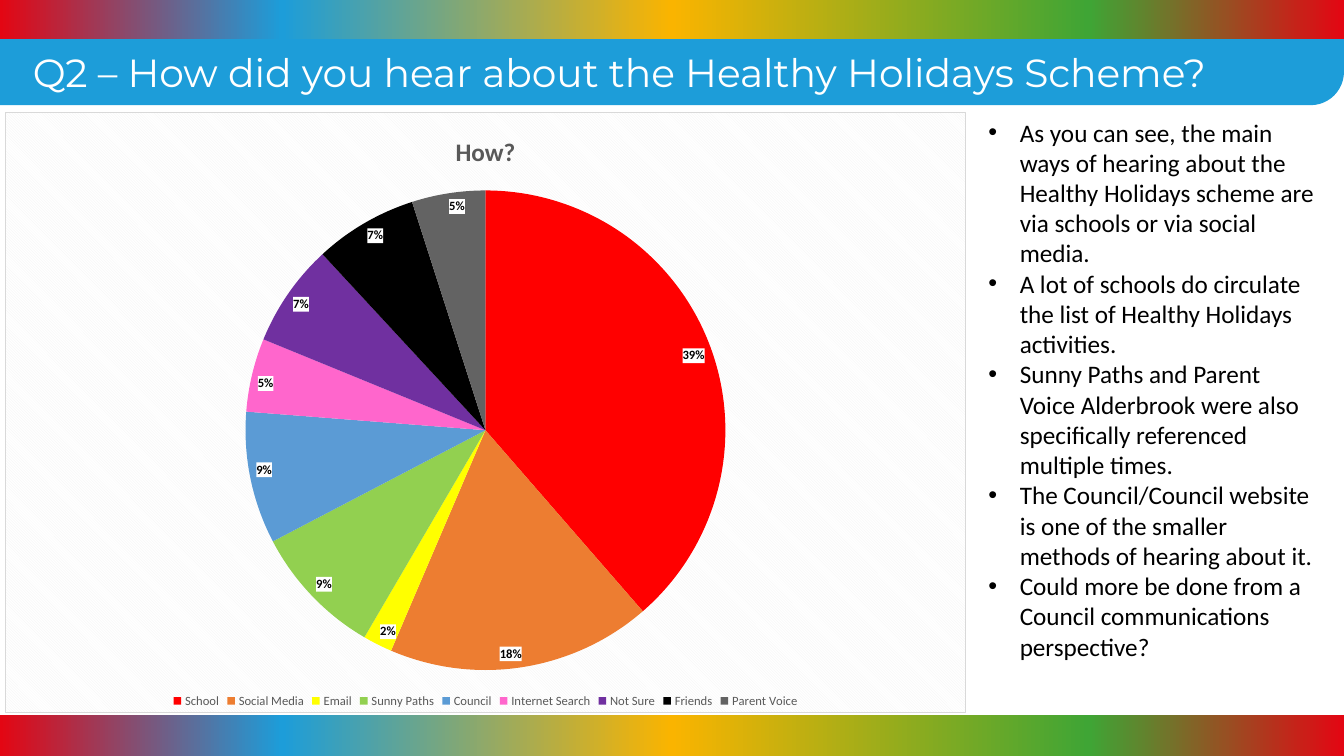
import pptx
import pptx.chart.data
import pptx.enum.chart
import pptx.enum.shapes
import pptx.enum.text
import pptx.oxml
import pptx.oxml.ns
from dataclasses import dataclass
from lxml import etree
from pptx.util import Cm, Pt

qn = pptx.oxml.ns.qn


@dataclass(frozen=True)
class Theme:
    banner: str = "1D9DD9"
    white: str = "FFFFFF"
    black: str = "000000"
    muted: str = "595959"
    frame: str = "D9D9D9"
    hatch: str = "F2F2F2"
    rainbow: tuple = ((0, "E30613"), (21, "1D9DD9"), (50, "FAB400"),
                      (81, "3FA535"), (100, "E30613"))
    heading_font: str = "Montserrat"
    body_font: str = "Calibri"
    heading_size: int = 28
    body_size: int = 18
    chart_size: int = 10
    label_size: int = 9


THEME = Theme()
SLIDE_WIDTH, SLIDE_HEIGHT = Cm(33.87), Cm(19.05)
STRIP_HEIGHT = Cm(1.02)

HEADING = "Q2 – How did you hear about the Healthy Holidays Scheme?"
SOURCES = (
    ("School", 39, "FF0000"),
    ("Social Media", 18, "ED7D31"),
    ("Email", 2, "FFFF00"),
    ("Sunny Paths", 9, "92D050"),
    ("Council", 9, "5B9BD5"),
    ("Internet Search", 5, "FF66CC"),
    ("Not Sure", 7, "7030A0"),
    ("Friends", 7, "000000"),
    ("Parent Voice", 5, "636363"),
)
FINDINGS = (
    "As you can see, the main ways of hearing about the Healthy Holidays "
    "scheme are via schools or via social media.",
    "A lot of schools do circulate the list of Healthy Holidays activities.",
    "Sunny Paths and Parent Voice Alderbrook were also specifically "
    "referenced multiple times.",
    "The Council/Council website is one of the smaller methods of hearing "
    "about it.",
    "Could more be done from a Council communications perspective?",
)


def rgb(code):
    return pptx.dml.color.RGBColor.from_string(code)


def apply_format(target, values):
    for name, value in values.items():
        setattr(target, name, value)


def style_font(font, size, color, name=THEME.body_font, bold=False):
    apply_format(font, {"size": Pt(size), "name": name, "bold": bold})
    font.color.rgb = rgb(color)


def add_plain_shape(slide, kind, left, top, width, height):
    shape = slide.shapes.add_shape(kind, left, top, width, height)
    shape.shadow.inherit = False
    shape.line.fill.background()
    return shape


def add_banner(slide):
    """Blue band whose lower right corner is rounded."""
    banner = add_plain_shape(
        slide, pptx.enum.shapes.MSO_SHAPE.ROUND_1_RECTANGLE,
        0, Cm(0.97), SLIDE_WIDTH, Cm(1.68))
    banner.adjustments[0] = 0.5
    banner.rotation = 180
    banner._element.spPr.find(qn("a:xfrm")).set("flipH", "1")
    banner.fill.solid()
    banner.fill.fore_color.rgb = rgb(THEME.banner)


def add_rainbow_strip(slide, top):
    strip = add_plain_shape(slide, pptx.enum.shapes.MSO_SHAPE.RECTANGLE,
                            0, top, SLIDE_WIDTH, STRIP_HEIGHT)
    strip.fill.gradient()
    strip.fill.gradient_angle = 0
    stops = strip._element.spPr.find(qn("a:gradFill")).find(qn("a:gsLst"))
    for stop in list(stops):
        stops.remove(stop)
    for percent, color in THEME.rainbow:
        stop = etree.SubElement(stops, qn("a:gs"), pos=str(percent * 1000))
        etree.SubElement(stop, qn("a:srgbClr"), val=color)


def add_text(slide, box, paragraphs, size, color, font_name, bulleted=False):
    frame = slide.shapes.add_textbox(*box).text_frame
    apply_format(frame, {
        "word_wrap": True,
        "auto_size": pptx.enum.text.MSO_AUTO_SIZE.SHAPE_TO_FIT_TEXT,
        "text": "\n".join(paragraphs),
    })
    for paragraph in frame.paragraphs:
        style_font(paragraph.runs[0].font, size, color, font_name)
        if bulleted:
            add_bullet(paragraph)


def add_bullet(paragraph):
    properties = paragraph._p.get_or_add_pPr()
    indent = Cm(0.79)
    properties.set("marL", str(indent))
    properties.set("indent", str(-indent))
    etree.SubElement(properties, qn("a:buFont"), typeface="Arial")
    etree.SubElement(properties, qn("a:buChar"), char="•")


def chart_fill(content):
    return pptx.oxml.parse_xml(
        f'<c:spPr {pptx.oxml.ns.nsdecls("c", "a")}>{content}</c:spPr>')


def solid(color):
    return f'<a:solidFill><a:srgbClr val="{color}"/></a:solidFill>'


def add_hatched_frame(chart):
    chart._chartSpace.find(qn("c:chart")).addnext(chart_fill(
        '<a:pattFill prst="dkDnDiag">'
        f'<a:fgClr><a:srgbClr val="{THEME.hatch}"/></a:fgClr>'
        f'<a:bgClr><a:srgbClr val="{THEME.white}"/></a:bgClr></a:pattFill>'
        f'<a:ln w="{Pt(0.75)}">{solid(THEME.frame)}</a:ln>'))


def place_pie(chart, **fractions):
    """Fix the plot's inner area as fractions of the chart."""
    plot_area = chart._chartSpace.find(qn("c:chart")).find(qn("c:plotArea"))
    for old_layout in plot_area.findall(qn("c:layout")):
        plot_area.remove(old_layout)
    layout = etree.Element(qn("c:layout"))
    manual = etree.SubElement(layout, qn("c:manualLayout"))
    settings = {"layoutTarget": "inner", "xMode": "edge", "yMode": "edge",
                **fractions}
    for tag, value in settings.items():
        etree.SubElement(manual, qn(f"c:{tag}"), val=str(value))
    plot_area.insert(0, layout)


def add_labels(plot):
    plot.has_data_labels = True
    labels = plot.data_labels
    apply_format(labels, {
        "show_percentage": True,
        "show_value": False,
        "number_format": "0%",
        "number_format_is_linked": False,
        "position": pptx.enum.chart.XL_LABEL_POSITION.INSIDE_END,
    })
    style_font(labels.font, THEME.label_size, THEME.black, bold=True)
    labels._element.find(qn("c:txPr")).addprevious(
        chart_fill(solid(THEME.white)))


def add_sources_pie(slide):
    names, shares, colors = zip(*SOURCES)
    data = pptx.chart.data.CategoryChartData()
    data.categories = names
    data.add_series("Series 1", shares)
    chart = slide.shapes.add_chart(
        pptx.enum.chart.XL_CHART_TYPE.PIE,
        Cm(0.13), Cm(2.82), Cm(24.21), Cm(15.14), data).chart
    style_font(chart.font, THEME.chart_size, THEME.black)

    chart.has_title = True
    chart.chart_title.text_frame.text = "How?"
    heading = chart.chart_title.text_frame.paragraphs[0].runs[0]
    style_font(heading.font, THEME.body_size, THEME.muted, bold=True)

    chart.has_legend = True
    apply_format(chart.legend, {
        "position": pptx.enum.chart.XL_LEGEND_POSITION.BOTTOM,
        "include_in_layout": False,
    })
    style_font(chart.legend.font, THEME.label_size, THEME.muted)

    pie = chart.plots[0]
    pie.vary_by_categories = True
    for index, color in enumerate(colors):
        slice_fill = pie.series[0].points[index].format.fill
        slice_fill.solid()
        slice_fill.fore_color.rgb = rgb(color)
    add_labels(pie)
    add_hatched_frame(chart)
    place_pie(chart, x=0.25, y=0.13, w=0.5, h=0.8)


def main():
    deck = pptx.Presentation()
    apply_format(deck, {"slide_width": SLIDE_WIDTH,
                        "slide_height": SLIDE_HEIGHT})
    slide = deck.slides.add_slide(deck.slide_layouts[6])
    add_banner(slide)
    add_text(slide, (Cm(0.58), Cm(1.09), Cm(32.92), Cm(2.64)), [HEADING],
             THEME.heading_size, THEME.white, THEME.heading_font)
    for top in (Cm(-0.03), SLIDE_HEIGHT - STRIP_HEIGHT):
        add_rainbow_strip(slide, top)
    add_sources_pie(slide)
    add_text(slide, (Cm(24.66), Cm(2.82), Cm(8.86), Cm(14.1)), FINDINGS,
             THEME.body_size, THEME.black, THEME.body_font, bulleted=True)
    deck.save("out.pptx")


if __name__ == "__main__":
    main()
